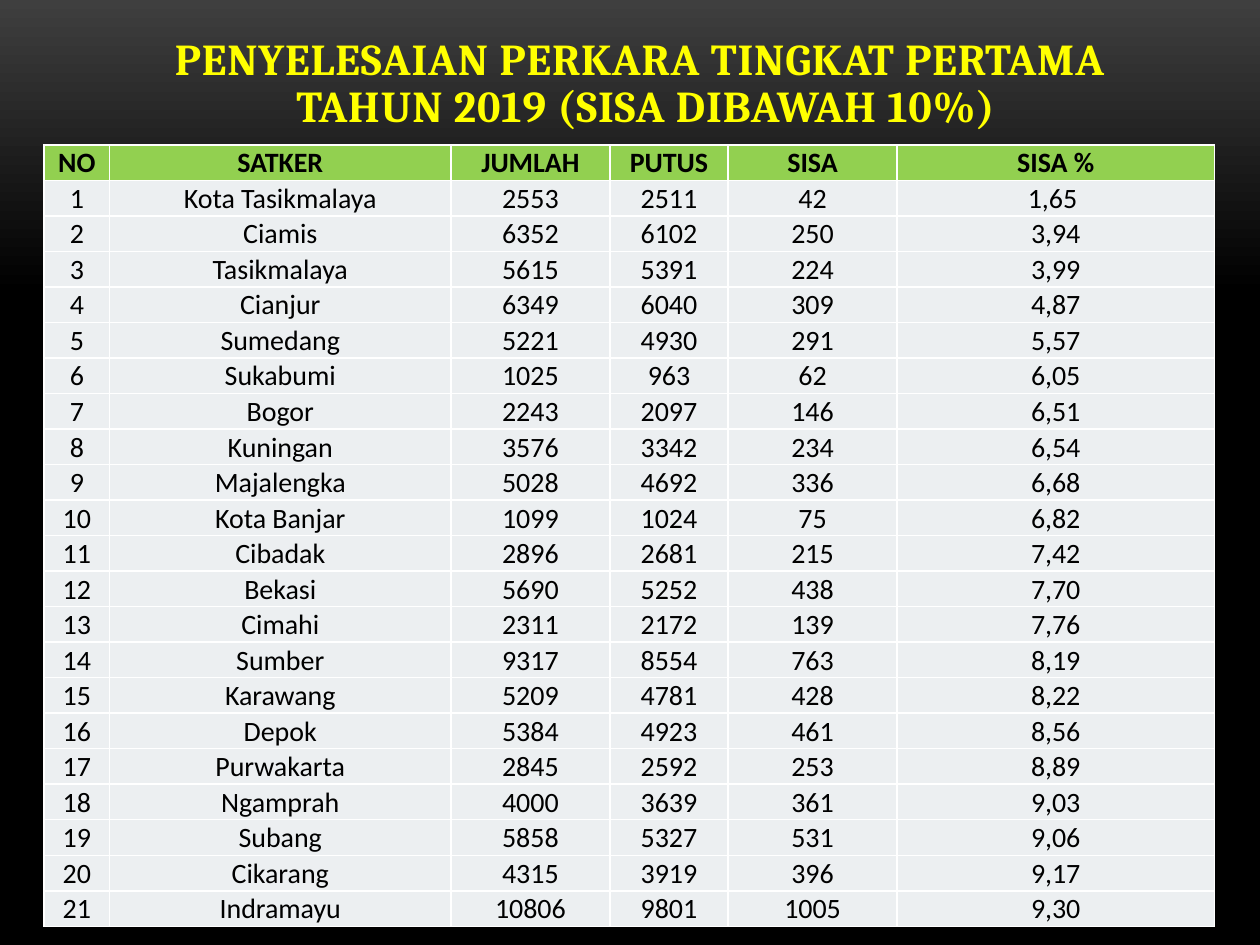
from copy import deepcopy
from typing import Any, NamedTuple

from lxml import etree
from pptx import Presentation
from pptx.dml.color import RGBColor
from pptx.enum.text import MSO_ANCHOR, MSO_AUTO_SIZE, PP_ALIGN
from pptx.oxml.ns import qn
from pptx.slide import Slide
from pptx.table import _Cell
from pptx.util import Inches, Pt

CENTER = PP_ALIGN.CENTER
MIDDLE = MSO_ANCHOR.MIDDLE
BOTTOM = MSO_ANCHOR.BOTTOM
NO_AUTOFIT = MSO_AUTO_SIZE.NONE

BLACK = RGBColor(0x00, 0x00, 0x00)
CHARCOAL = RGBColor(0x3F, 0x3F, 0x3F)
YELLOW = RGBColor(0xFF, 0xFF, 0x00)
GREEN = RGBColor(0x92, 0xD0, 0x50)
PALE_GREY = RGBColor(0xEC, 0xEF, 0xF1)
BORDER_HEX = "FFFFFF"

TITLE = "PENYELESAIAN PERKARA TINGKAT PERTAMA\v TAHUN 2019 (SISA DIBAWAH 10%)"
TITLE_FONT = {"name": "Cambria", "size": Pt(25.2), "bold": True}
TITLE_PLACE = {"left": Inches(0.75), "top": Inches(0.52),
               "width": Inches(8.67), "height": Inches(0.54)}
TITLE_FRAME = {"word_wrap": True, "auto_size": NO_AUTOFIT,
               "vertical_anchor": BOTTOM, "margin_bottom": Inches(0.01)}
CELL_FONT = {"name": "Calibri", "size": Pt(16)}
CELL_FRAME = {"margin_left": Inches(0.01), "margin_right": Inches(0.01),
              "margin_top": Inches(0.01), "margin_bottom": 0,
              "vertical_anchor": MIDDLE}

HEADERS = ("NO", "SATKER", "JUMLAH", "PUTUS", "SISA", "SISA %")
COLUMN_WIDTHS = (0.52, 2.71, 1.26, 0.94, 1.34, 2.52)
ROW_HEIGHT = 0.26
TABLE_HEIGHT = 6.09


class Court(NamedTuple):
    name: str
    total: int
    decided: int
    percent_left: str

    def cells(self, number: int) -> tuple[str, ...]:
        remaining = self.total - self.decided
        return (str(number), self.name, str(self.total), str(self.decided),
                str(remaining), self.percent_left)


COURTS = (
    Court("Kota Tasikmalaya", 2553, 2511, "1,65 "),
    Court("Ciamis", 6352, 6102, "3,94"),
    Court("Tasikmalaya", 5615, 5391, "3,99"),
    Court("Cianjur", 6349, 6040, "4,87"),
    Court("Sumedang", 5221, 4930, "5,57"),
    Court("Sukabumi", 1025, 963, "6,05"),
    Court("Bogor", 2243, 2097, "6,51"),
    Court("Kuningan", 3576, 3342, "6,54"),
    Court("Majalengka", 5028, 4692, "6,68"),
    Court("Kota Banjar", 1099, 1024, "6,82"),
    Court("Cibadak", 2896, 2681, "7,42"),
    Court("Bekasi", 5690, 5252, "7,70"),
    Court("Cimahi", 2311, 2172, "7,76"),
    Court("Sumber", 9317, 8554, "8,19"),
    Court("Karawang", 5209, 4781, "8,22"),
    Court("Depok", 5384, 4923, "8,56"),
    Court("Purwakarta", 2845, 2592, "8,89"),
    Court("Ngamprah", 4000, 3639, "9,03"),
    Court("Subang", 5858, 5327, "9,06"),
    Court("Cikarang", 4315, 3919, "9,17"),
    Court("Indramayu", 10806, 9801, "9,30"),
)


def apply(target: Any, values: dict[str, Any]) -> None:
    """Set each named attribute of the target."""
    for name, value in values.items():
        setattr(target, name, value)


def paint_background(slide: Slide) -> None:
    """Fade from charcoal at the top to black at 31 % and below."""
    fill = slide.background.fill
    fill.gradient()
    fill.gradient_angle = 270
    for stop, color, position in zip(fill.gradient_stops, (CHARCOAL, BLACK), (0, 0.31)):
        stop.color.rgb = color
        stop.position = position
    stops = slide.element.find(".//" + qn("a:gsLst"))
    last = deepcopy(stops[-1])
    last.set("pos", "100000")
    stops.append(last)


def write_title(slide: Slide) -> None:
    title = slide.shapes.title
    apply(title, TITLE_PLACE)
    frame = title.text_frame
    apply(frame, TITLE_FRAME)
    frame.text = TITLE
    para = frame.paragraphs[0]
    apply(para, {"alignment": CENTER, "line_spacing": 0.9})
    for span in para.runs:
        apply(span.font, TITLE_FONT)
        span.font.color.rgb = YELLOW
        span.font._element.set("spc", "50")


def add_borders(cell: _Cell) -> None:
    properties = cell._tc.get_or_add_tcPr()
    for index, side in enumerate(("a:lnL", "a:lnR", "a:lnT", "a:lnB")):
        line = etree.Element(qn(side), w=str(Pt(1)))
        fill = etree.SubElement(line, qn("a:solidFill"))
        etree.SubElement(fill, qn("a:srgbClr"), val=BORDER_HEX)
        properties.insert(index, line)


def write_cell(cell: _Cell, text: str, is_header: bool) -> None:
    apply(cell, CELL_FRAME)
    cell.fill.solid()
    cell.fill.fore_color.rgb = GREEN if is_header else PALE_GREY
    add_borders(cell)
    para = cell.text_frame.paragraphs[0]
    para.alignment = CENTER
    span = para.add_run()
    span.text = text
    apply(span.font, CELL_FONT | {"bold": is_header})
    span.font.color.rgb = BLACK


def add_court_table(slide: Slide) -> None:
    rows = [HEADERS] + [court.cells(number) for number, court in enumerate(COURTS, 1)]
    holder = slide.shapes.add_table(
        len(rows), len(HEADERS), Inches(0.35), Inches(1.15),
        Inches(sum(COLUMN_WIDTHS)), Inches(TABLE_HEIGHT))
    table = holder.table
    for column, width in zip(table.columns, COLUMN_WIDTHS):
        column.width = Inches(width)
    for row_index, (row, texts) in enumerate(zip(table.rows, rows)):
        row.height = Inches(ROW_HEIGHT)
        for cell, text in zip(row.cells, texts):
            write_cell(cell, text, is_header=row_index == 0)
    holder.height = Inches(TABLE_HEIGHT)


def main() -> None:
    deck = Presentation()
    apply(deck, {"slide_width": Inches(10), "slide_height": Inches(7.5)})
    page = deck.slides.add_slide(deck.slide_layouts.get_by_name("Title Only"))
    paint_background(page)
    write_title(page)
    add_court_table(page)
    deck.save("out.pptx")


if __name__ == "__main__":
    main()
